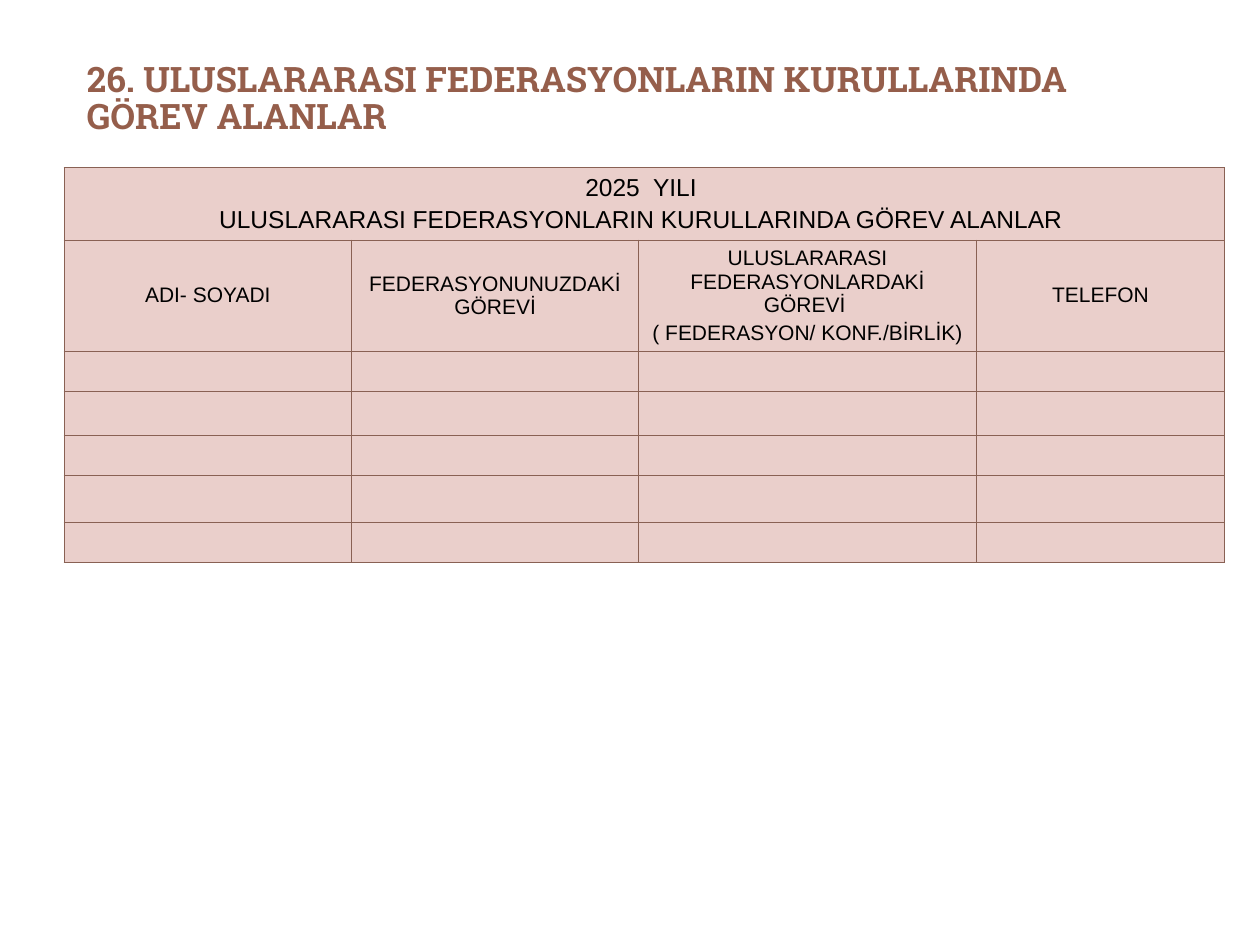
"""Builds the slide listing members of international federation boards."""
import dataclasses

import lxml.etree
import pptx
import pptx.dml.color
import pptx.enum.text
import pptx.oxml.ns
import pptx.util


@dataclasses.dataclass(frozen=True)
class Theme:
    """Colours, fonts and type sizes of the slide."""
    heading: str = "955E4B"
    body: str = "000000"
    cell: str = "EACFCB"
    border: str = "896154"
    heading_font: str = "Roboto Slab"
    body_font: str = "Arial"
    heading_size: int = 20
    banner_size: int = 14
    label_size: int = 12
    border_width: float = 0.75


THEME = Theme()
HEADING = "26. ULUSLARARASI FEDERASYONLARIN KURULLARINDA GÖREV ALANLAR"
BANNER = "2025  YILI \nULUSLARARASI FEDERASYONLARIN KURULLARINDA GÖREV ALANLAR "
LABELS = [
    "ADI- SOYADI",
    "FEDERASYONUNUZDAKİ GÖREVİ",
    "ULUSLARARASI FEDERASYONLARDAKİ GÖREVİ \n( FEDERASYON/ KONF./BİRLİK)",
    "TELEFON",
]
COLUMNS = [2.28, 2.28, 2.68, 1.97]
ROWS = [0.57, 0.88, 0.32, 0.35, 0.32, 0.37, 0.32]


def colour(code):
    """Return an RGB colour from its hex code."""
    return pptx.dml.color.RGBColor.from_string(code)


def style_runs(paragraph, font, size, code, bold=False):
    """Format every run of a paragraph."""
    for run in paragraph.runs:
        run.font.name = font
        run.font.size = pptx.util.Pt(size)
        run.font.bold = bold
        run.font.color.rgb = colour(code)


def add_heading(slide):
    """Place and format the title placeholder."""
    heading = slide.shapes.title
    heading.left, heading.top, heading.width, heading.height = map(
        pptx.util.Inches, (0.59, 0.44, 9, 1.25))
    frame = heading.text_frame
    frame.text = HEADING
    frame.word_wrap = True
    frame.auto_size = pptx.enum.text.MSO_AUTO_SIZE.NONE
    frame.vertical_anchor = pptx.enum.text.MSO_ANCHOR.TOP
    paragraph = frame.paragraphs[0]
    paragraph.alignment = pptx.enum.text.PP_ALIGN.LEFT
    paragraph.line_spacing = 0.9
    style_runs(paragraph, THEME.heading_font, THEME.heading_size, THEME.heading, True)


def add_borders(cell):
    """Draw the four borders of a cell, ahead of its fill."""
    properties = cell._tc.get_or_add_tcPr()
    qn = pptx.oxml.ns.qn
    for index, side in enumerate(("a:lnL", "a:lnR", "a:lnT", "a:lnB")):
        line = lxml.etree.Element(qn(side), w=str(pptx.util.Pt(THEME.border_width)))
        fill = lxml.etree.SubElement(line, qn("a:solidFill"))
        lxml.etree.SubElement(fill, qn("a:srgbClr"), val=THEME.border)
        properties.insert(index, line)


def fill_cell(cell, text, size):
    """Write centred text in a cell and set its colours."""
    cell.fill.solid()
    cell.fill.fore_color.rgb = colour(THEME.cell)
    add_borders(cell)
    cell.vertical_anchor = pptx.enum.text.MSO_ANCHOR.MIDDLE
    cell.text_frame.text = text
    for paragraph in cell.text_frame.paragraphs:
        paragraph.alignment = pptx.enum.text.PP_ALIGN.CENTER
        if text:
            paragraph.space_before = pptx.util.Pt(size * 0.2)
            style_runs(paragraph, THEME.body_font, size, THEME.body)
        else:
            lxml.etree.SubElement(
                paragraph._p, pptx.oxml.ns.qn("a:endParaRPr"), sz=str(size * 100))


def add_members_table(slide):
    """Add the table with its banner, labels and empty entry rows."""
    frame = slide.shapes.add_table(
        len(ROWS), len(COLUMNS),
        *map(pptx.util.Inches, (0.51, 1.33, sum(COLUMNS), sum(ROWS))))
    table = frame.table
    table.first_row = table.horz_banding = False
    for column, width in zip(table.columns, COLUMNS):
        column.width = pptx.util.Inches(width)
    for row, height in zip(table.rows, ROWS):
        row.height = pptx.util.Inches(height)
    blank = [""] * len(COLUMNS)
    contents = [[BANNER] + blank[1:], LABELS] + [blank] * (len(ROWS) - 2)
    for row, texts in zip(table.rows, contents):
        size = THEME.banner_size if texts[0] == BANNER else THEME.label_size
        for cell, text in zip(row.cells, texts):
            fill_cell(cell, text, size)
    table.cell(0, 0).merge(table.cell(0, len(COLUMNS) - 1))


def main():
    """Build and save the slide."""
    deck = pptx.Presentation()
    deck.slide_width, deck.slide_height = pptx.util.Inches(10), pptx.util.Inches(7.5)
    slide = deck.slides.add_slide(deck.slide_layouts.get_by_name("Title Only"))
    add_heading(slide)
    add_members_table(slide)
    deck.save("out.pptx")


if __name__ == "__main__":
    main()
